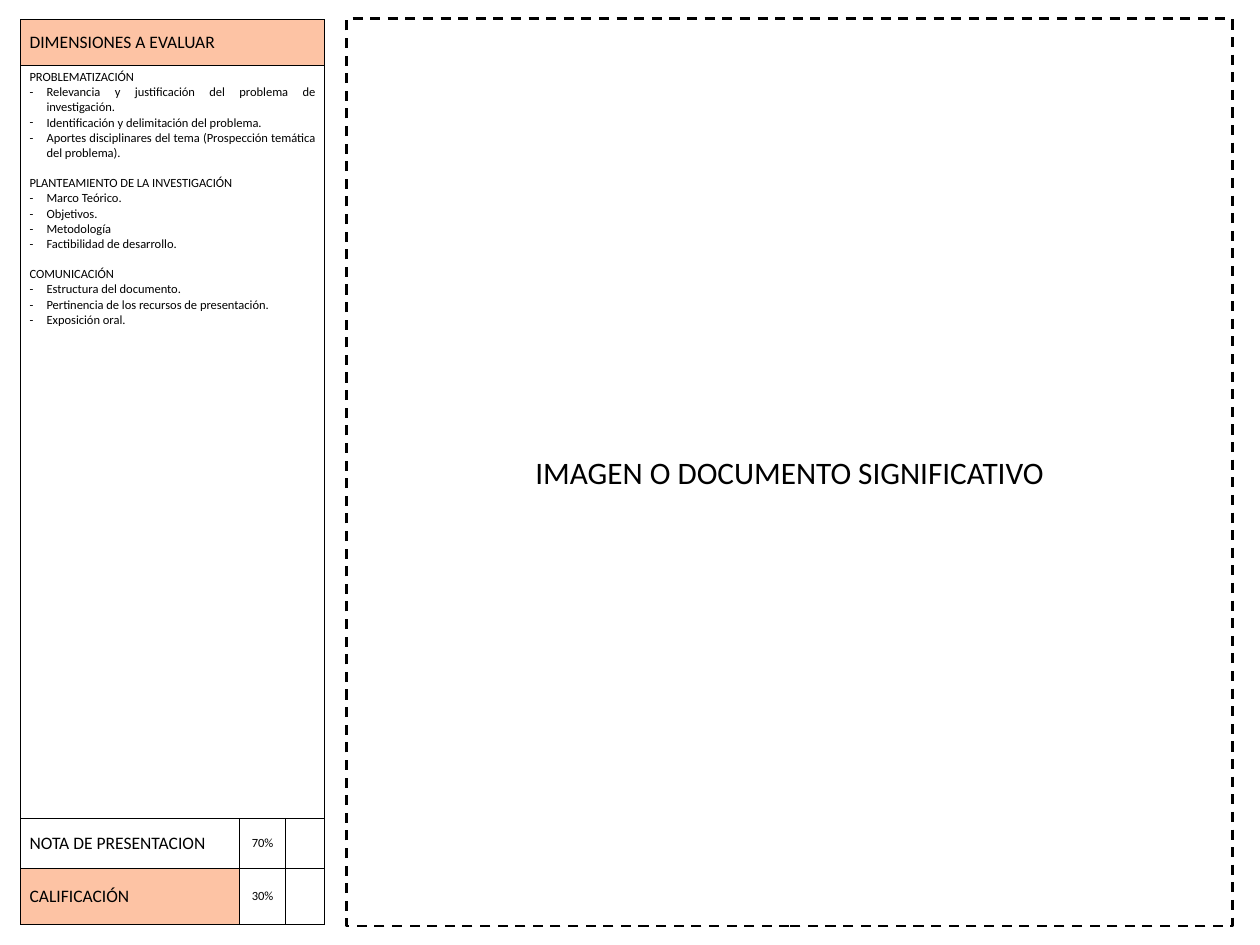
"""Build the evaluation sheet slide with its grading table and dashed frame."""
from lxml.etree import SubElement
from pptx import Presentation
from pptx.dml.color import RGBColor
from pptx.enum.dml import MSO_LINE
from pptx.enum.shapes import MSO_SHAPE
from pptx.enum.text import MSO_ANCHOR, PP_ALIGN
from pptx.oxml import parse_xml
from pptx.oxml.ns import nsdecls, qn
from pptx.util import Cm, Pt

BLACK = RGBColor(0x00, 0x00, 0x00)
WHITE = RGBColor(0xFF, 0xFF, 0xFF)
PEACH = RGBColor(0xFD, 0xC3, 0xA4)
FONT = "Calibri"

COLUMN_WIDTHS = [6.17, 1.32, 1.08]
ROW_HEIGHTS = [1.28, 21.26, 1.4, 1.6]
DIMENSIONS = {
    "PROBLEMATIZACIÓN": [
        "Relevancia y justificación del problema de investigación.",
        "Identificación y delimitación del problema.",
        "Aportes disciplinares del tema (Prospección temática del problema).",
    ],
    "PLANTEAMIENTO DE LA INVESTIGACIÓN": [
        "Marco Teórico.",
        "Objetivos.",
        "Metodología",
        "Factibilidad de desarrollo.",
    ],
    "COMUNICACIÓN": [
        "Estructura del documento.",
        "Pertinencia de los recursos de presentación.",
        "Exposición oral.",
    ],
}
LABELS = [
    (0, 0, "DIMENSIONES A EVALUAR", 14, PP_ALIGN.LEFT),
    (2, 0, "NOTA DE PRESENTACION", 14, PP_ALIGN.LEFT),
    (2, 1, "70%", 10, PP_ALIGN.CENTER),
    (3, 0, "CALIFICACIÓN", 14, PP_ALIGN.LEFT),
    (3, 1, "30%", 10, PP_ALIGN.CENTER),
]


def write(paragraph, text, size, alignment):
    paragraph.alignment = alignment
    run = paragraph.add_run()
    run.text = text
    run.font.name = FONT
    run.font.size = Pt(size)
    run.font.bold = False
    run.font.color.rgb = BLACK


def add_borders(cell):
    properties = cell._tc.get_or_add_tcPr()
    for position, side in enumerate(("lnL", "lnR", "lnT", "lnB")):
        border = parse_xml(
            f'<a:{side} {nsdecls("a")} w="{Pt(1)}"><a:solidFill>'
            f'<a:srgbClr val="{BLACK}"/></a:solidFill></a:{side}>'
        )
        properties.insert(position, border)


presentation = Presentation()
presentation.slide_width = Cm(35.56)
presentation.slide_height = Cm(26.67)
slide = presentation.slides.add_slide(presentation.slide_layouts[6])

frame = slide.shapes.add_shape(
    MSO_SHAPE.RECTANGLE, Cm(9.78), Cm(0.53), Cm(25), Cm(25.6)
)
frame.shadow.inherit = False
frame.fill.background()
frame.line.color.rgb = BLACK
frame.line.width = Pt(2)
frame.line.dash_style = MSO_LINE.DASH
frame.text_frame.word_wrap = True
frame.text_frame.vertical_anchor = MSO_ANCHOR.MIDDLE
write(frame.text_frame.paragraphs[0], "IMAGEN O DOCUMENTO SIGNIFICATIVO", 25, PP_ALIGN.CENTER)

table = slide.shapes.add_table(
    len(ROW_HEIGHTS), len(COLUMN_WIDTHS), Cm(0.58), Cm(0.56),
    Cm(sum(COLUMN_WIDTHS)), Cm(sum(ROW_HEIGHTS)),
).table
for column, width in zip(table.columns, COLUMN_WIDTHS):
    column.width = Cm(width)
for row, height in zip(table.rows, ROW_HEIGHTS):
    row.height = Cm(height)

for cell in table.iter_cells():
    cell.fill.solid()
    cell.fill.fore_color.rgb = WHITE
    add_borders(cell)
for row_index in (0, 3):
    table.cell(row_index, 0).fill.fore_color.rgb = PEACH
for row_index in (0, 1):
    table.cell(row_index, 0).merge(table.cell(row_index, 2))

for row_index, column_index, text, size, alignment in LABELS:
    cell = table.cell(row_index, column_index)
    cell.vertical_anchor = MSO_ANCHOR.MIDDLE
    write(cell.text_frame.paragraphs[0], text, size, alignment)

text_frame = table.cell(1, 0).text_frame
for index, (heading, items) in enumerate(DIMENSIONS.items()):
    paragraph = text_frame.add_paragraph() if index else text_frame.paragraphs[0]
    paragraph.space_before = Pt(12.2 if index else 0)
    write(paragraph, heading, 10, PP_ALIGN.LEFT)
    for item in items:
        paragraph = text_frame.add_paragraph()
        write(paragraph, item, 10, PP_ALIGN.JUSTIFY)
        properties = paragraph._p.get_or_add_pPr()
        properties.set("marL", str(Cm(0.48)))
        properties.set("indent", str(-Cm(0.48)))
        SubElement(properties, qn("a:buFont"), typeface=FONT)
        SubElement(properties, qn("a:buChar"), char="-")

presentation.save("out.pptx")
